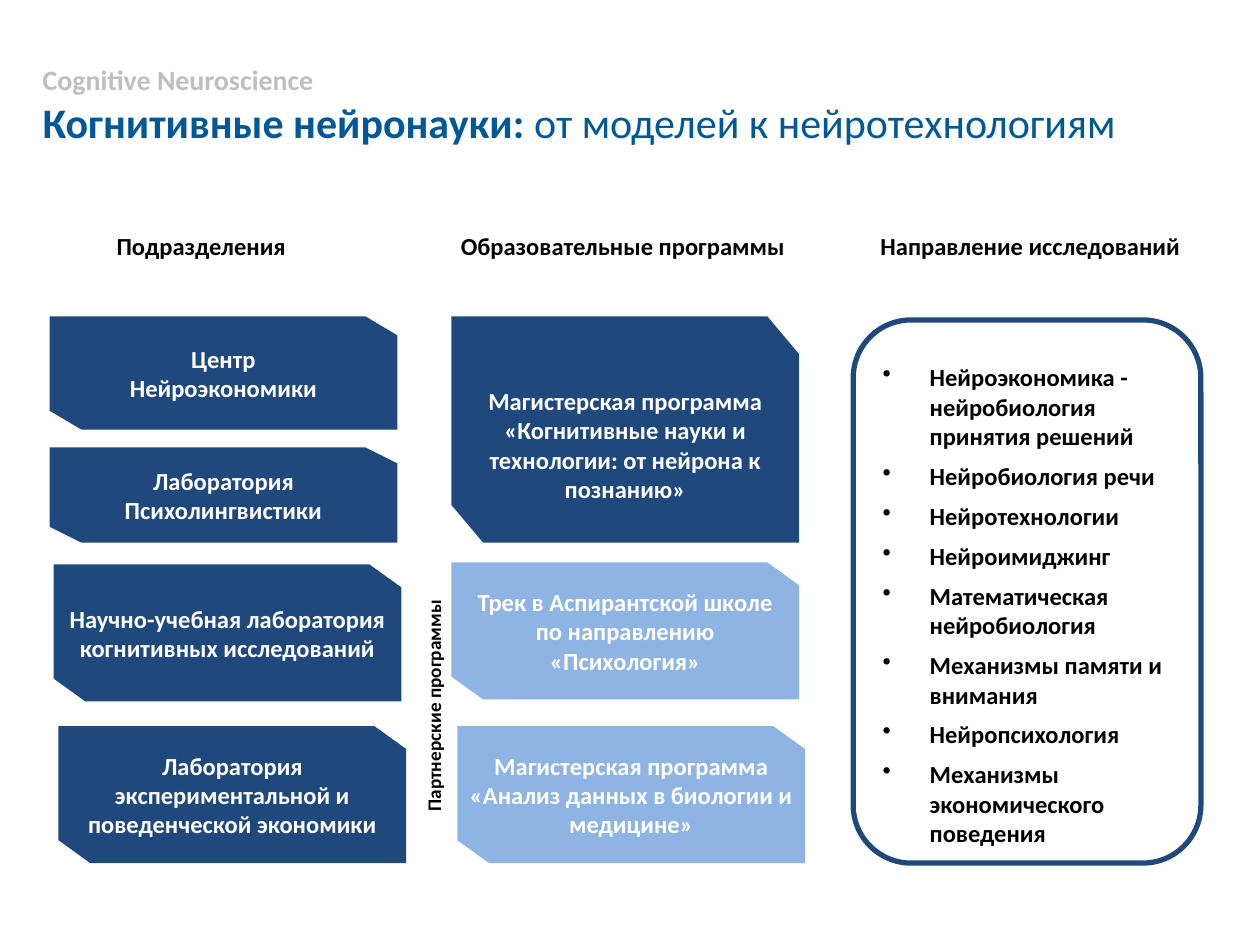
import pptx
import pptx.dml.color
import pptx.enum.shapes
import pptx.enum.text
import pptx.oxml
import pptx.oxml.ns
import pptx.util

Cm = pptx.util.Cm
Pt = pptx.util.Pt
Anchor = pptx.enum.text.MSO_ANCHOR
Align = pptx.enum.text.PP_ALIGN
COLORS = {
    "navy": "1F497D",
    "light": "8EB4E3",
    "title": "005996",
    "gray": "BFBFBF",
    "black": "000000",
    "white": "FFFFFF",
}
WIDTH = 7.01
CUT = 0.64

BLOCKS = [
    (1.0, 6.38, 2.28, "navy", "Центр\nНейроэкономики"),
    (1.0, 9.02, 1.92, "navy", "Лаборатория Психолингвистики"),
    (1.08, 11.38, 2.76, "navy", "Научно-учебная лаборатория когнитивных исследований"),
    (1.18, 14.64, 2.76, "navy", "Лаборатория экспериментальной и поведенческой экономики"),
    (9.1, 6.38, 4.56, "navy",
     "Магистерская программа «Когнитивные науки и технологии: от нейрона к познанию»"),
    (9.1, 11.34, 2.76, "light", "Трек в Аспирантской школе\nпо направлению «Психология»"),
    (9.22, 14.64, 2.76, "light", "Магистерская программа «Анализ данных в биологии и медицине»"),
]
HEADS = [
    (2.1, 3.94, "Подразделения"),
    (9.04, 7.09, "Образовательные программы"),
    (17.5, 6.68, "Направление исследований"),
]
TOPICS = [
    "Нейроэкономика - нейробиология принятия решений",
    "Нейробиология речи",
    "Нейротехнологии",
    "Нейроимиджинг",
    "Математическая нейробиология",
    "Механизмы памяти и внимания",
    "Нейропсихология",
    "Механизмы экономического поведения",
]


def rgb(name):
    return pptx.dml.color.RGBColor.from_string(COLORS[name])


def style(para, size, color, align=Align.LEFT):
    font = para.font
    font.name, font.size, font.bold = "Calibri", Pt(size), True
    font.color.rgb = rgb(color)
    para.alignment = align


def write(frame, lines, size, color, align=Align.LEFT):
    frame.text = "\n".join(lines)
    for para in frame.paragraphs:
        style(para, size, color, align)


def paint(shape, fill):
    shape.shadow.inherit = False
    shape.fill.solid()
    shape.fill.fore_color.rgb = rgb(fill)


def add_title(slide):
    frame = slide.shapes.add_textbox(Cm(0.86), Cm(1.24), Cm(23.65), Cm(1.73)).text_frame
    frame.word_wrap = True
    frame.vertical_anchor = Anchor.MIDDLE
    frame.margin_left = frame.margin_right = frame.margin_top = frame.margin_bottom = 0
    write(frame, ["Cognitive Neuroscience", "Когнитивные нейронауки: "], 16, "gray")
    para = frame.paragraphs[1]
    style(para, 24, "title")
    run = para.add_run()
    run.text = "от моделей к нейротехнологиям"
    run.font.bold = False


def add_label(slide, left, top, width, height, text, size, angle=0):
    box = slide.shapes.add_textbox(Cm(left), Cm(top), Cm(width), Cm(height))
    box.rotation = angle
    box.text_frame.word_wrap = False
    write(box.text_frame, [text], size, "black")


def add_block(slide, left, top, height, fill, text):
    right, base, drop = left + WIDTH, top + height, height / 6
    points = [
        (right - CUT, top), (right, top + drop), (right, base),
        (left + CUT, base), (left, base - drop),
    ]
    path = slide.shapes.build_freeform(Cm(left), Cm(top), scale=1.0)
    path.add_line_segments([(Cm(x), Cm(y)) for x, y in points], close=True)
    shape = path.convert_to_shape()
    paint(shape, fill)
    shape.line.fill.background()
    frame = shape.text_frame
    frame.word_wrap = True
    frame.vertical_anchor = Anchor.MIDDLE
    write(frame, text.split("\n"), 14, "white", Align.CENTER)
    return shape


def add_list(slide):
    kind = pptx.enum.shapes.MSO_SHAPE.FLOWCHART_ALTERNATE_PROCESS
    shape = slide.shapes.add_shape(kind, Cm(17.2), Cm(6.45), Cm(WIDTH), Cm(10.95))
    paint(shape, "white")
    shape.line.color.rgb = rgb("navy")
    shape.line.width = Pt(3)
    frame = shape.text_frame
    frame.word_wrap = True
    frame.vertical_anchor = Anchor.TOP
    frame.margin_top = Cm(0.51)
    write(frame, TOPICS, 14, "black")
    for order, para in enumerate(frame.paragraphs):
        para.space_before = Pt(6 if order else 0)
        props = para._p.get_or_add_pPr()
        props.set("marL", str(Cm(0.95)))
        props.set("indent", str(-Cm(0.95)))
        mark = pptx.oxml.parse_xml(
            f'<a:buChar {pptx.oxml.ns.nsdecls("a")} char="•"/>')
        props.find(pptx.oxml.ns.qn("a:defRPr")).addprevious(mark)


def main():
    deck = pptx.Presentation()
    deck.slide_width, deck.slide_height = Cm(25.4), Cm(19.05)
    slide = deck.slides.add_slide(deck.slide_layouts[6])
    add_title(slide)
    for left, width, text in HEADS:
        add_label(slide, left, 4.54, width, 0.86, text, 14)
    for block in BLOCKS:
        shape = add_block(slide, *block)
        if block[2] > 4:
            shape.text_frame.margin_top = Cm(0.73)
    add_label(slide, 6.3, 13.79, 4.9, 0.74, "Партнерские программы", 11, 270)
    add_list(slide)
    deck.save("out.pptx")


if __name__ == "__main__":
    main()
